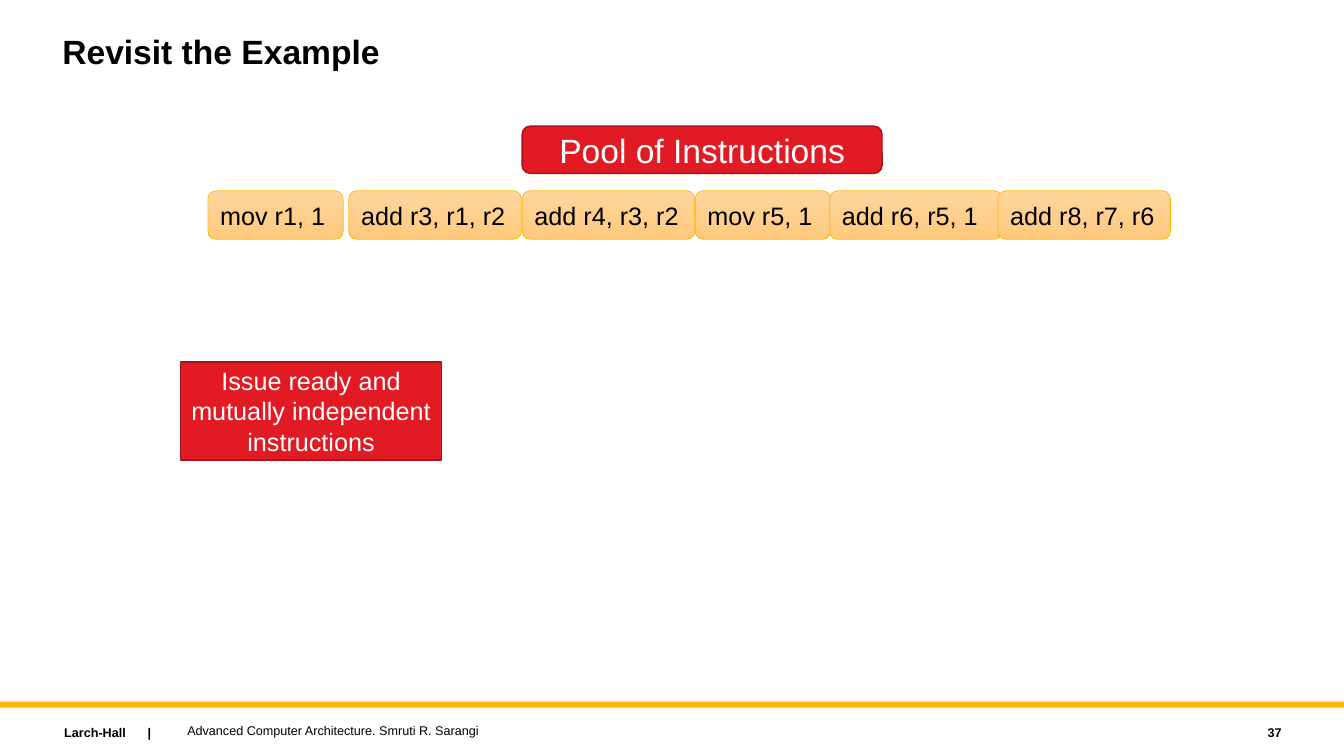
from pptx import Presentation
from pptx.dml.color import RGBColor
from pptx.enum.shapes import MSO_SHAPE as Shape
from pptx.enum.text import MSO_ANCHOR as Anchor, MSO_AUTO_SIZE as AutoSize, PP_ALIGN as Align
from pptx.oxml import parse_xml
from pptx.oxml.ns import nsdecls
from pptx.util import Cm, Pt

BLACK, WHITE = "000000", "FFFFFF"
RED, DARK_RED = "E21A23", "A7131A"
AMBER, PALE_AMBER, SOFT_AMBER = "FFB600", "FFD69E", "FFC97C"
SHORT, LONG = 3.41, 4.35

INSTRUCTIONS = [
    ("mov r1, 1", 0, SHORT),
    ("add r3, r1, r2", 3.55, LONG),
    ("add r4, r3, r2", 7.92, LONG),
    ("mov r5, 1", 12.28, SHORT),
    ("add r6, r5, 1", 15.67, LONG),
    ("add r8, r7, r6", 19.91, LONG),
]


def colour(value):
    return RGBColor.from_string(value)


def write(box, text, size=18, ink=BLACK, bold=False, align=Align.LEFT,
          anchor=Anchor.MIDDLE, spacing=1.0, side=0.25, tab=None):
    frame = box.text_frame
    frame.word_wrap = True
    frame.auto_size = AutoSize.NONE
    frame.vertical_anchor = anchor
    frame.margin_left = frame.margin_right = Cm(side)
    frame.margin_top = frame.margin_bottom = Cm(0.13)
    para = frame.paragraphs[0]
    para.alignment = align
    para.line_spacing = spacing
    if tab is not None:
        para._p.get_or_add_pPr().append(parse_xml(
            f'<a:tabLst {nsdecls("a")}><a:tab pos="{Cm(tab)}" algn="l"/></a:tabLst>'))
    span = para.add_run()
    span.text = text
    span.font.name = "Arial"
    span.font.size = Pt(size)
    span.font.bold = bold
    span.font.color.rgb = colour(ink)


def add_label(page, left, top, width, height, text, **style):
    box = page.shapes.add_textbox(Cm(left), Cm(top), Cm(width), Cm(height))
    write(box, text, **style)


def add_block(page, kind, left, top, width, height, fill, edge=None, weight=1):
    block = page.shapes.add_shape(kind, Cm(left), Cm(top), Cm(width), Cm(height))
    block.shadow.inherit = False
    if isinstance(fill, tuple):
        block.fill.gradient()
        block.fill.gradient_angle = 270
        for stop, shade in zip(block.fill.gradient_stops, fill):
            stop.color.rgb = colour(shade)
    else:
        block.fill.solid()
        block.fill.fore_color.rgb = colour(fill)
    if edge:
        block.line.color.rgb = colour(edge)
        block.line.width = Pt(weight)
    else:
        block.line.fill.background()
    return block


def add_title(page, left, top, width, height):
    title = page.shapes.title
    title.left, title.top, title.width, title.height = map(Cm, (left, top, width, height))
    write(title, "Revisit the Example", size=24, bold=True, anchor=Anchor.TOP, spacing=0.9)


def add_pool(page, left, top):
    for text, offset, width in INSTRUCTIONS:
        cell = add_block(page, Shape.ROUNDED_RECTANGLE, left + offset, top + 1.63, width, 1.22,
                         (PALE_AMBER, SOFT_AMBER), AMBER, 0.5)
        write(cell, text)
    heading = add_block(page, Shape.ROUNDED_RECTANGLE, left + 7.92, top, 9.07, 1.19, RED, DARK_RED)
    write(heading, "Pool of Instructions", size=24, ink=WHITE, align=Align.CENTER)


def add_issue_note(page, left, top, width, height):
    note = add_block(page, Shape.RECTANGLE, left, top, width, height, RED, DARK_RED)
    write(note, "Issue ready and mutually independent instructions",
          ink=WHITE, align=Align.CENTER, side=0.2)


def add_footer(page, left, top, width):
    add_block(page, Shape.RECTANGLE, left, top, width, 0.15, AMBER)
    add_label(page, left + 1.37, top + 0.46, 5.77, 0.64, "Larch-Hall\t|",
              size=9, bold=True, tab=2.1)
    add_label(page, left + 4.47, top + 0.41, 20.32, 0.64,
              "Advanced Computer Architecture. Smruti R. Sarangi", size=9)
    add_label(page, left + width - 4.88, top + 0.46, 3.56, 0.64, "37",
              size=9, bold=True, align=Align.RIGHT)


def main():
    deck = Presentation()
    deck.slide_width, deck.slide_height = Cm(33.87), Cm(19.05)
    page = deck.slides.add_slide(deck.slide_layouts[5])
    add_title(page, 1.32, 0.76, 25.4, 2.29)
    add_pool(page, 5.24, 3.18)
    add_issue_note(page, 4.55, 9.12, 6.58, 2.47)
    add_footer(page, 0, 17.68, 33.87)
    deck.save("out.pptx")


if __name__ == "__main__":
    main()
